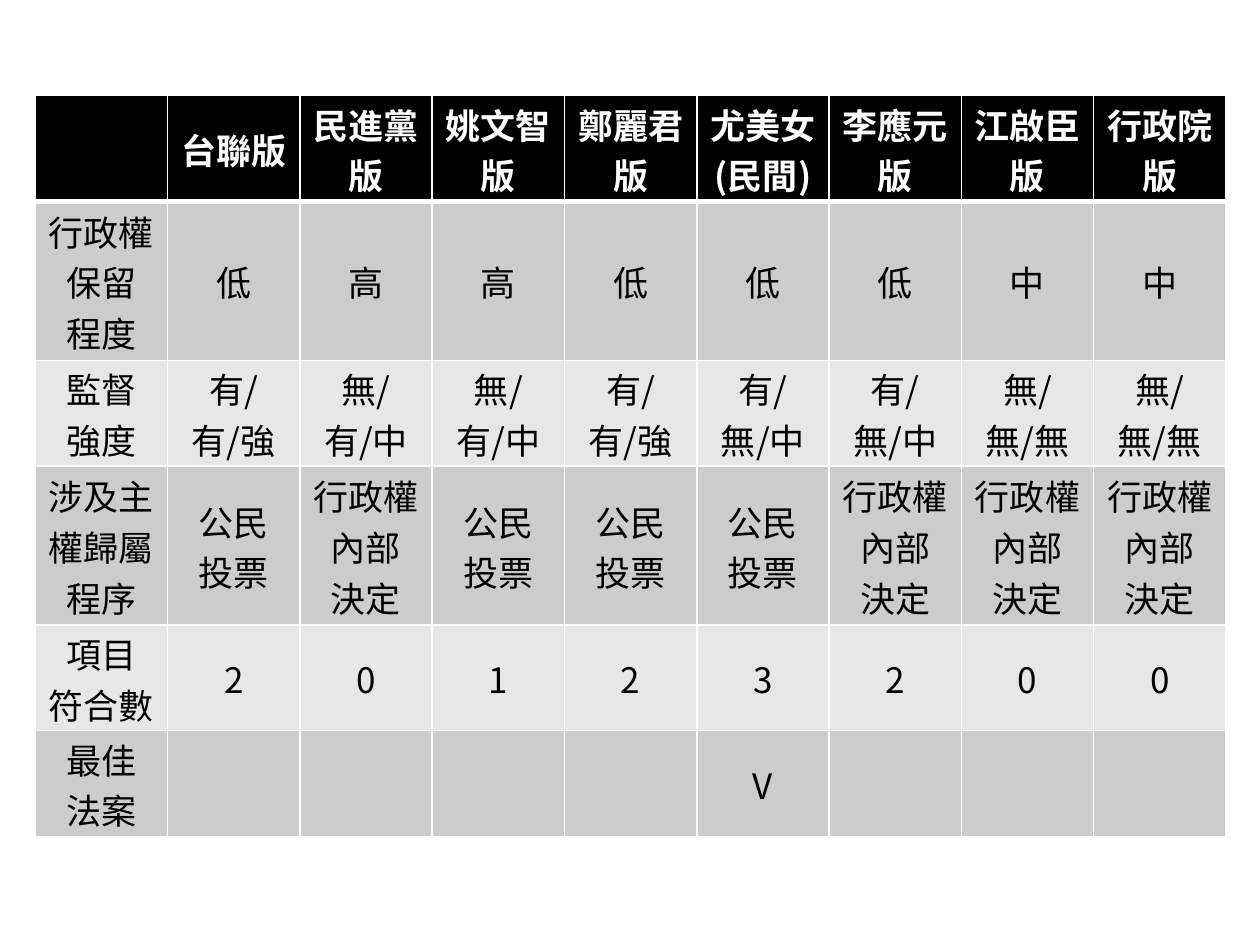
from lxml.etree import SubElement
from pptx import Presentation
from pptx.dml.color import RGBColor
from pptx.enum.text import MSO_ANCHOR, PP_ALIGN
from pptx.oxml.ns import qn
from pptx.util import Inches, Pt

BLACK = RGBColor(0x00, 0x00, 0x00)
WHITE = RGBColor(0xFF, 0xFF, 0xFF)
DARK_BAND = RGBColor(0xCC, 0xCC, 0xCC)
LIGHT_BAND = RGBColor(0xE7, 0xE7, 0xE7)
FONT = "Noto Sans CJK JP"

VOTE = "公民\n投票"
INTERNAL = "行政權內部\n決定"
COMPARISON = [
    ["", "台聯版", "民進黨版", "姚文智版", "鄭麗君版", "尤美女(民間)",
     "李應元版", "江啟臣版", "行政院版"],
    ["行政權保留\n程度", "低", "高", "高", "低", "低", "低", "中", "中"],
    ["監督\n強度", "有/有/強", "無/有/中", "無/有/中", "有/有/強",
     "有/無/中", "有/無/中", "無/無/無", "無/無/無"],
    ["涉及主權歸屬程序", VOTE, INTERNAL, VOTE, VOTE, VOTE,
     INTERNAL, INTERNAL, INTERNAL],
    ["項目\n符合數", "2", "0", "1", "2", "3", "2", "0", "0"],
    ["最佳\n法案", "", "", "", "", "V", "", "", ""],
]
LINES_PER_ROW = [2, 3, 2, 3, 2, 2]
LINE_HEIGHT = 0.42
COLUMN_WIDTH = 1.05
LEFT, TOP = 0.28, 0.76


def add_borders(cell, widths):
    properties = cell._tc.get_or_add_tcPr()
    for side, width in widths.items():
        border = SubElement(properties, qn(f"a:ln{side}"), w=str(Pt(width)))
        fill = SubElement(border, qn("a:solidFill"))
        SubElement(fill, qn("a:srgbClr"), val=str(WHITE))


def write_cell(cell, text, is_header):
    cell.vertical_anchor = MSO_ANCHOR.MIDDLE
    cell.margin_left = cell.margin_right = cell.margin_top = Inches(0.01)
    cell.margin_bottom = 0
    paragraph = cell.text_frame.paragraphs[0]
    paragraph.text = text
    paragraph.alignment = PP_ALIGN.CENTER
    for run in paragraph.runs:
        run.font.size = Pt(20)
        run.font.bold = is_header
        run.font.color.rgb = WHITE if is_header else BLACK
        run.font.name = FONT
        SubElement(run.font._element, qn("a:ea"), typeface=FONT)


presentation = Presentation()
presentation.slide_width, presentation.slide_height = Inches(10), Inches(7.5)
slide = presentation.slides.add_slide(presentation.slide_layouts[6])

column_count = len(COMPARISON[0])
table = slide.shapes.add_table(
    len(COMPARISON), column_count, Inches(LEFT), Inches(TOP),
    Inches(COLUMN_WIDTH * column_count),
    Inches(LINE_HEIGHT * sum(LINES_PER_ROW))).table
for column in table.columns:
    column.width = Inches(COLUMN_WIDTH)

for row_index, (values, lines) in enumerate(zip(COMPARISON, LINES_PER_ROW)):
    table.rows[row_index].height = Inches(LINE_HEIGHT * lines)
    is_header = row_index == 0
    band = BLACK if is_header else (LIGHT_BAND, DARK_BAND)[row_index % 2]
    widths = {"L": 1, "R": 1, "T": 3 if row_index == 1 else 1,
              "B": 3 if is_header else 1}
    for column_index, value in enumerate(values):
        cell = table.cell(row_index, column_index)
        write_cell(cell, value, is_header)
        add_borders(cell, widths)
        cell.fill.solid()
        cell.fill.fore_color.rgb = band

presentation.save("out.pptx")
